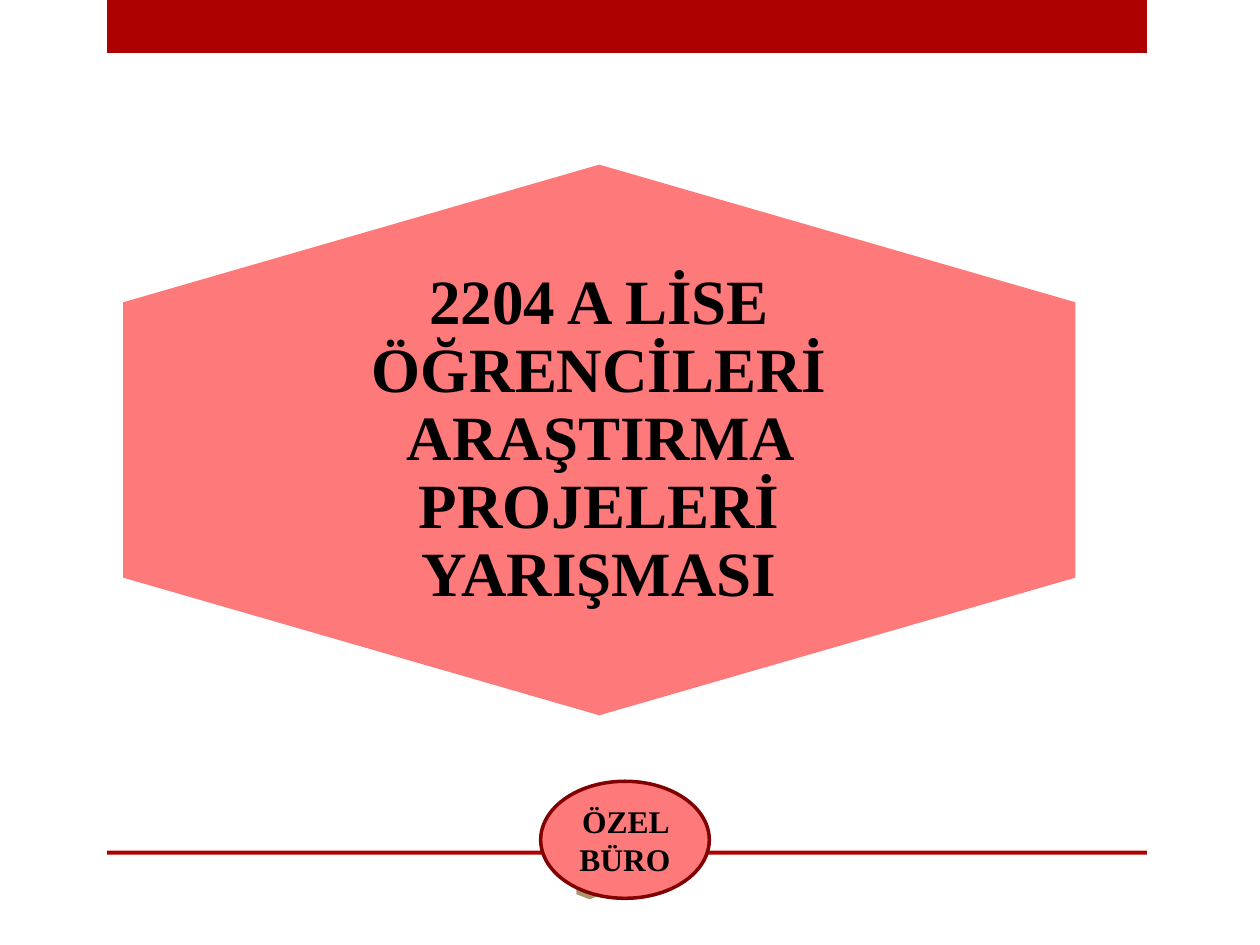
from dataclasses import dataclass

from pptx import Presentation
from pptx.dml.color import RGBColor
from pptx.enum.shapes import MSO_SHAPE
from pptx.enum.text import MSO_ANCHOR, PP_ALIGN
from pptx.util import Cm, Pt

RECTANGLE = MSO_SHAPE.RECTANGLE
HEXAGON = MSO_SHAPE.HEXAGON
OVAL = MSO_SHAPE.OVAL
MIDDLE = MSO_ANCHOR.MIDDLE
CENTER = PP_ALIGN.CENTER


@dataclass(frozen=True)
class Theme:
    bar: RGBColor = RGBColor(0xAD, 0x01, 0x01)
    panel: RGBColor = RGBColor(0xFE, 0x79, 0x79)
    badge_edge: RGBColor = RGBColor(0x80, 0x01, 0x01)
    accent: RGBColor = RGBColor(0xAC, 0x95, 0x6E)
    text: RGBColor = RGBColor(0, 0, 0)
    font: str = "Times New Roman"
    title_size: int = 36
    badge_size: int = 18


THEME = Theme()


def add_filled(slide, kind, box, color):
    shape = slide.shapes.add_shape(kind, *(Cm(length) for length in box))
    shape.shadow.inherit = False
    shape.fill.solid()
    shape.fill.fore_color.rgb = color
    shape.line.fill.background()
    return shape


def add_pointed_hexagon(slide, box, color):
    left, top, width, height = box
    shift = (width - height) / 2
    hexagon = add_filled(
        slide, HEXAGON, (left + shift, top - shift, height, width), color
    )
    hexagon.rotation = 90
    hexagon.adjustments[0] = 0.25


def write_centered(frame, wording, size):
    frame.word_wrap = True
    frame.vertical_anchor = MIDDLE
    paragraph = frame.paragraphs[0]
    paragraph.alignment = CENTER
    run = paragraph.add_run()
    run.text = wording
    run.font.name = THEME.font
    run.font.size = Pt(size)
    run.font.bold = True
    run.font.color.rgb = THEME.text
    return paragraph


def add_page_bars(slide, box):
    left, top, width, height = box
    add_filled(slide, RECTANGLE, (left, top, width, 1.07), THEME.bar)
    add_filled(slide, RECTANGLE, (left, top + height - 0.08, width, 0.08), THEME.bar)


def add_title_panel(slide, box):
    left, top, width, height = box
    add_pointed_hexagon(slide, box, THEME.panel)
    side, rise = width / 6, height / 6
    title = slide.shapes.add_textbox(
        Cm(left + side), Cm(top + rise), Cm(width - 2 * side), Cm(height - 2 * rise)
    )
    frame = title.text_frame
    frame.margin_left = frame.margin_right = Cm(0.38)
    frame.margin_top = frame.margin_bottom = Cm(0.38)
    paragraph = write_centered(
        frame,
        "2204 A LİSE ÖĞRENCİLERİ ARAŞTIRMA PROJELERİ YARIŞMASI",
        THEME.title_size,
    )
    paragraph.line_spacing = 0.9


def add_office_badge(slide, box):
    left, top, width, height = box
    add_pointed_hexagon(slide, (left + 0.72, top + 1.97, 0.53, 0.41), THEME.accent)
    badge = add_filled(slide, OVAL, box, THEME.panel)
    badge.line.color.rgb = THEME.badge_edge
    badge.line.width = Pt(2)
    write_centered(badge.text_frame, "ÖZEL BÜRO", THEME.badge_size)


def main():
    deck = Presentation()
    deck.slide_width, deck.slide_height = Cm(25.4), Cm(19.05)
    slide = deck.slides.add_slide(deck.slide_layouts[6])
    add_page_bars(slide, (2.16, 0, 20.96, 17.23))
    add_title_panel(slide, (2.48, 3.32, 19.2, 11.1))
    add_office_badge(slide, (10.9, 15.75, 3.4, 2.36))
    deck.save("out.pptx")


if __name__ == "__main__":
    main()
